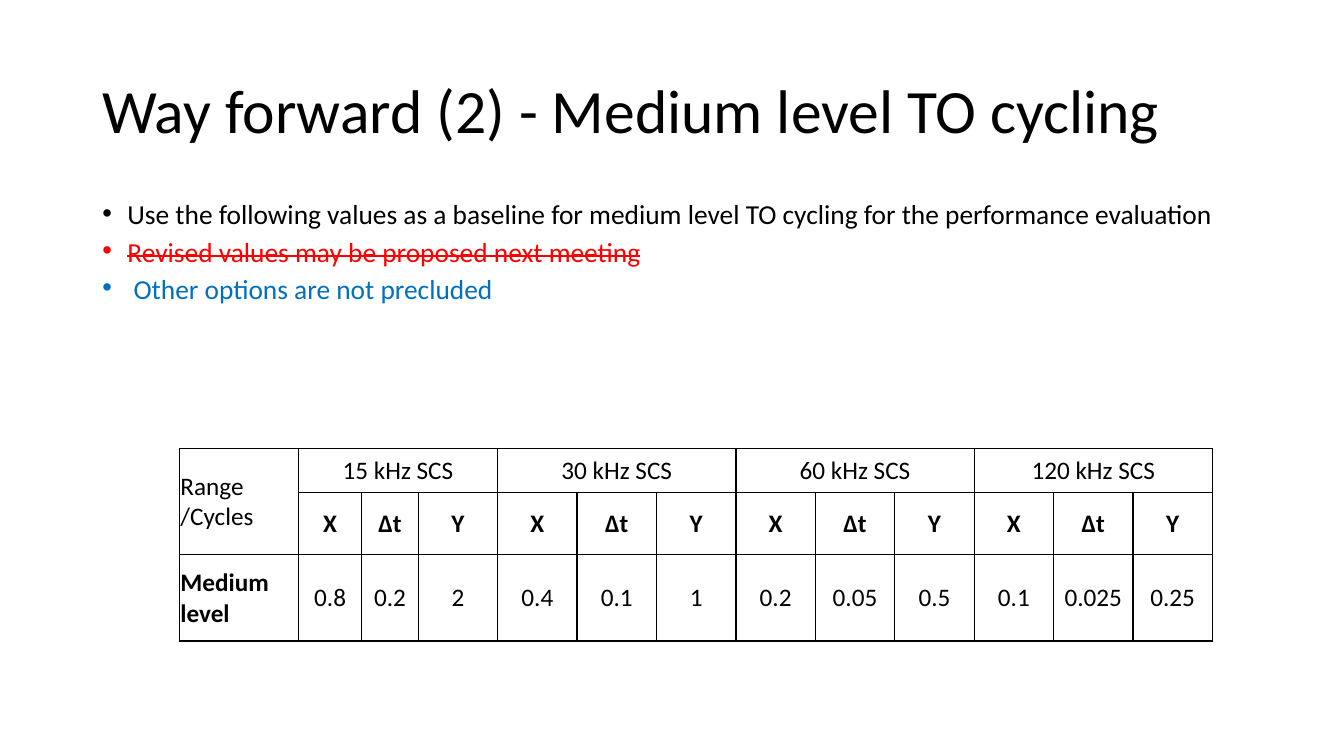
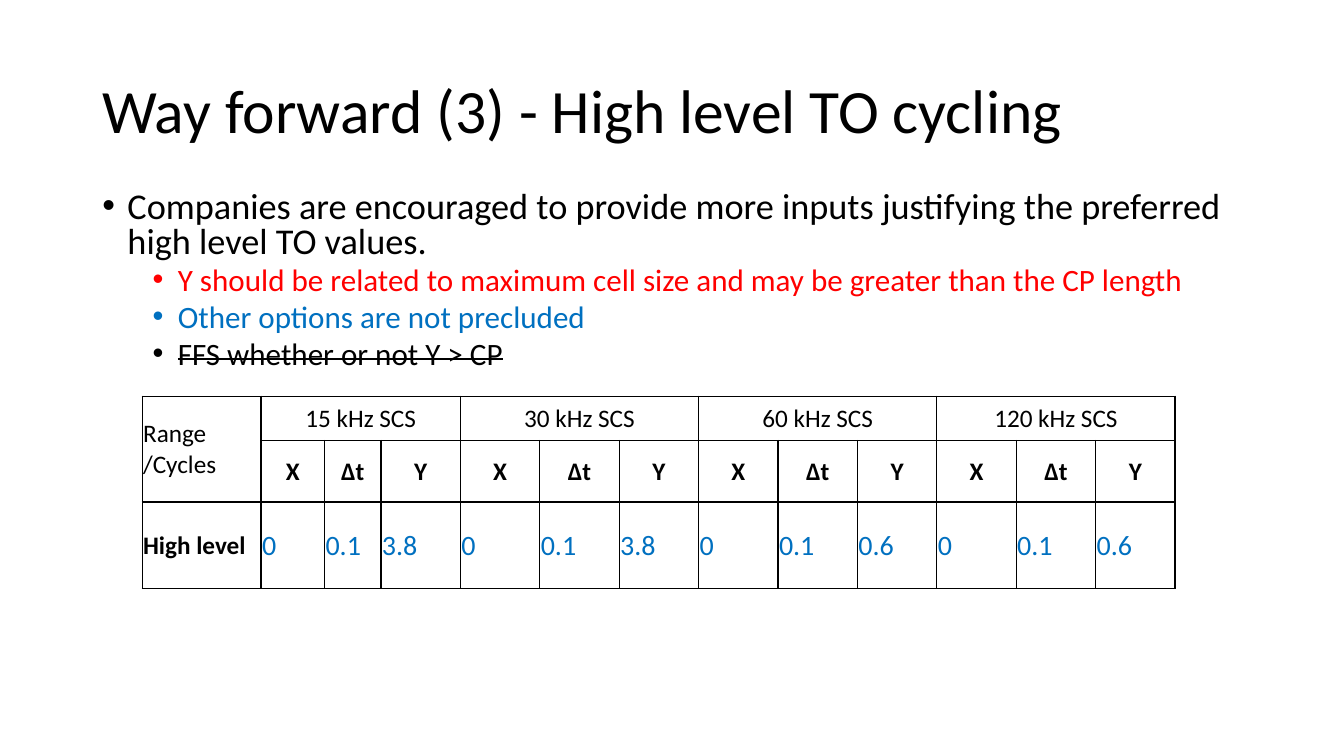
"""Builds two way-forward slides on TO cycling levels."""
import dataclasses

import lxml.etree
import pptx
import pptx.dml.color
import pptx.enum.text
import pptx.oxml.ns
import pptx.util

ANCHOR = pptx.enum.text.MSO_ANCHOR
ALIGN = pptx.enum.text.PP_ALIGN


@dataclasses.dataclass(frozen=True)
class Theme:
    font: str = "Calibri"
    ink: str = "000000"
    paper: str = "FFFFFF"
    removed: str = "FF0000"
    added: str = "0070C0"
    title: float = 44
    body: float = 19.6
    lead: float = 25.9
    sub: float = 22.2
    cell: float = 18
    value: float = 20
    border: float = 1


class Deck:
    COLS, ROWS = 160, 90
    LEFT, WIDTH = 11, 138
    GROUPS = ("15 kHz SCS", "30 kHz SCS", "60 kHz SCS", "120 kHz SCS")
    FIELDS = ("X", "∆t", "Y")

    def __init__(self, theme):
        self.theme = theme
        self.prs = pptx.Presentation()
        self.prs.slide_width = pptx.util.Inches(40 / 3)
        self.prs.slide_height = pptx.util.Inches(7.5)
        self.s = None

    def x(self, cols):
        return round(self.prs.slide_width * cols / self.COLS)

    def y(self, rows):
        return round(self.prs.slide_height * rows / self.ROWS)

    def style(self, p, size, color=None, bold=False, strike=False):
        for r in p.runs:
            r.font.name = self.theme.font
            r.font.size = pptx.util.Pt(size)
            r.font.bold = bold
            r.font.color.rgb = pptx.dml.color.RGBColor.from_string(color or self.theme.ink)
            if strike:
                r._r.get_or_add_rPr().set("strike", "sngStrike")

    def text_frame(self, top, height, anchor):
        sp = self.s.shapes.add_textbox(self.x(self.LEFT), self.y(top), self.x(self.WIDTH), self.y(height))
        tf = sp.text_frame
        tf.word_wrap = True
        tf.vertical_anchor = anchor
        return tf

    def slide(self, title):
        self.s = self.prs.slides.add_slide(self.prs.slide_layouts[6])
        tf = self.text_frame(4.8, 17.4, ANCHOR.MIDDLE)
        tf.text = title
        p = tf.paragraphs[0]
        p.line_spacing = 0.9
        self.style(p, self.theme.title)

    def bullets(self, top, height, spacing, items):
        tf = self.text_frame(top, height, ANCHOR.TOP)
        for i, (level, text, size, color, strike) in enumerate(items):
            p = tf.add_paragraph() if i else tf.paragraphs[0]
            p.text = text
            p.level = level
            p.line_spacing = spacing
            p.space_before = pptx.util.Pt(5 if level else 10)
            self.style(p, size, color, strike=strike)
            pPr = p._p.get_or_add_pPr()
            pPr.set("marL", str(self.x(3 + 6 * level)))
            pPr.set("indent", str(-self.x(3)))
            for tag, key, value in (("a:buFont", "typeface", "Arial"), ("a:buChar", "char", "•")):
                lxml.etree.SubElement(pPr, pptx.oxml.ns.qn(tag)).set(key, value)

    def box(self, cell):
        qn = pptx.oxml.ns.qn
        tcPr = cell._tc.get_or_add_tcPr()
        for side in ("a:lnL", "a:lnR", "a:lnT", "a:lnB"):
            ln = lxml.etree.SubElement(tcPr, qn(side), w=str(pptx.util.Pt(self.theme.border)))
            fill = lxml.etree.SubElement(ln, qn("a:solidFill"))
            lxml.etree.SubElement(fill, qn("a:srgbClr"), val=self.theme.ink)
        cell.fill.solid()
        cell.fill.fore_color.rgb = pptx.dml.color.RGBColor.from_string(self.theme.paper)
        cell.margin_left = cell.margin_right = cell.margin_top = pptx.util.Inches(0.01)
        cell.margin_bottom = 0
        cell.vertical_anchor = ANCHOR.MIDDLE

    def label(self, cell, text, align=ALIGN.CENTER, size=None, color=None, bold=False):
        cell.text = text
        p = cell.text_frame.paragraphs[0]
        p.alignment = align
        self.style(p, size or self.theme.cell, color, bold)

    def table(self, left, top, level, values, **value_style):
        width, heights, narrow = 123, (5.28, 5.28, 10.32), (14.16, 7.56, 6.72)
        n = 1 + len(values)
        widths = narrow + ((width - sum(narrow)) / (n - len(narrow)),) * (n - len(narrow))
        shape = self.s.shapes.add_table(len(heights), n, self.x(left), self.y(top),
                                        self.x(width), self.y(sum(heights)))
        table = shape.table
        table.first_row = table.horz_banding = False
        for column, cols in zip(table.columns, widths):
            column.width = self.x(cols)
        for row, rows in zip(table.rows, heights):
            row.height = self.y(rows)
        for cell in table.iter_cells():
            self.box(cell)
        table.cell(0, 0).merge(table.cell(1, 0))
        self.label(table.cell(0, 0), "Range /Cycles", ALIGN.LEFT)
        self.label(table.cell(2, 0), level, ALIGN.LEFT, bold=True)
        span = len(self.FIELDS)
        for i, group in enumerate(self.GROUPS):
            first = 1 + span * i
            table.cell(0, first).merge(table.cell(0, first + span - 1))
            self.label(table.cell(0, first), group)
        for i, value in enumerate(values):
            self.label(table.cell(1, i + 1), self.FIELDS[i % span], bold=True)
            self.label(table.cell(2, i + 1), value, **value_style)


def main():
    t = Theme()
    deck = Deck(t)

    deck.slide("Way forward (2) - Medium level TO cycling")
    deck.bullets(24, 14.28, 0.7, [
        (0, "Use the following values as a baseline for medium level TO cycling "
            "for the performance evaluation", t.body, t.ink, False),
        (0, "Revised values may be proposed next meeting", t.body, t.removed, True),
        (0, " Other options are not precluded", t.body, t.added, False),
    ])
    deck.table(21.36, 53.4, "Medium level",
               "0.8 0.2 2 0.4 0.1 1 0.2 0.05 0.5 0.1 0.025 0.25".split())

    deck.slide("Way forward (3) - High level TO cycling")
    deck.bullets(22.2, 25, 0.8, [
        (0, "Companies are encouraged to provide more inputs justifying "
            "the preferred high level TO values.", t.lead, t.ink, False),
        (1, "Y should be related to maximum cell size and may be greater "
            "than the CP length", t.sub, t.removed, False),
        (1, "Other options are not precluded", t.sub, t.added, False),
        (1, "FFS whether or not Y > CP", t.sub, t.ink, True),
    ])
    deck.table(16.92, 47.16, "High level",
               "0 0.1 3.8 0 0.1 3.8 0 0.1 0.6 0 0.1 0.6".split(),
               align=ALIGN.LEFT, size=t.value, color=t.added)

    deck.prs.save("out.pptx")


if __name__ == "__main__":
    main()
